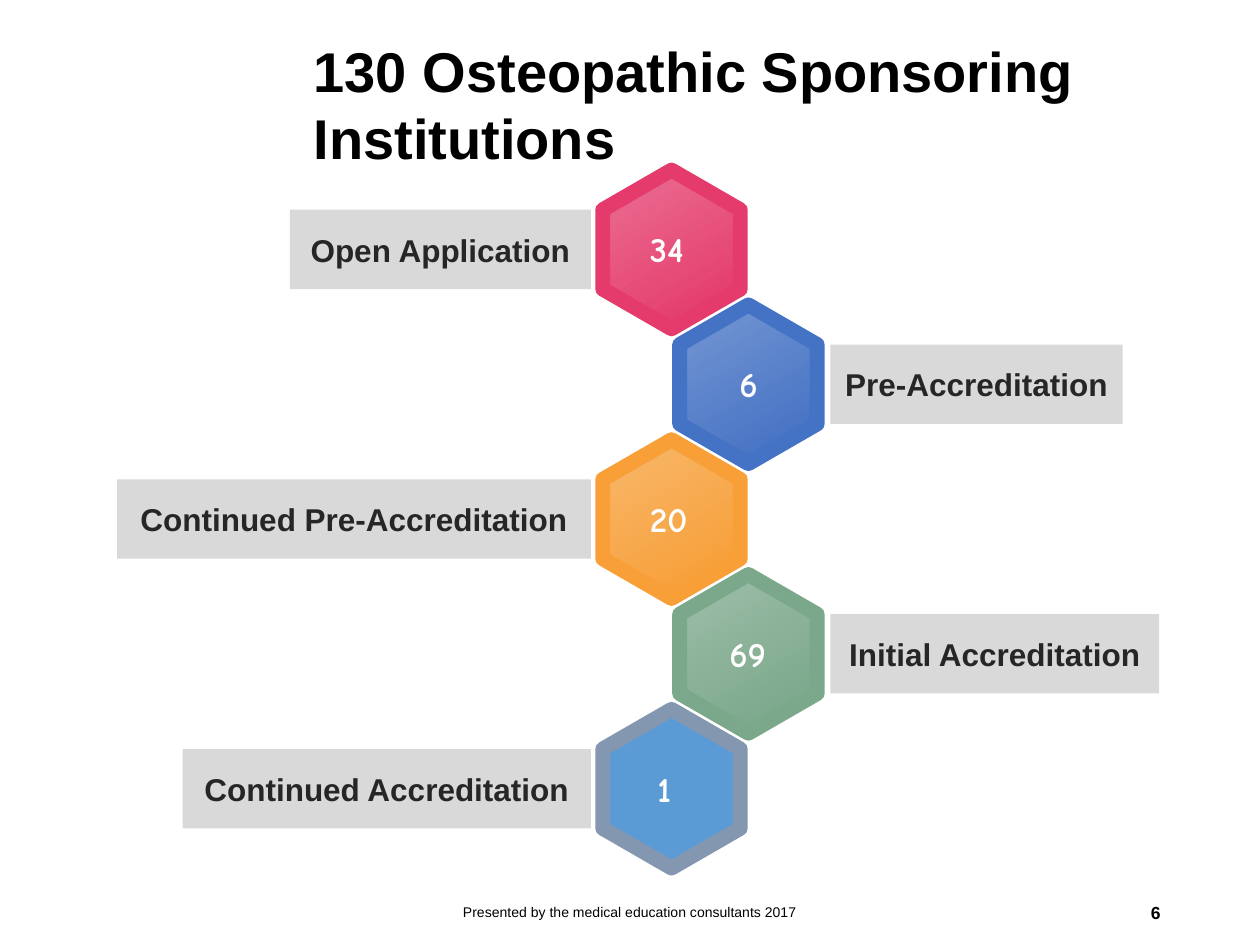
from math import cos, radians, sin

from lxml import etree
from pptx import Presentation
from pptx.dml.color import RGBColor
from pptx.enum.shapes import MSO_SHAPE
from pptx.enum.text import MSO_ANCHOR, MSO_AUTO_SIZE, PP_ALIGN
from pptx.oxml.ns import qn
from pptx.util import Inches, Pt

COLORS = {
    "pink": "E53B6C", "blue": "4472C4", "orange": "F89F37", "green": "7BA88B",
    "sky": "5B9BD5", "slate": "8497B0", "label": "D9D9D9", "dark": "262626",
    "white": "FFFFFF", "black": "000000",
}

TITLE = "130 Osteopathic Sponsoring Institutions"
FOOTER = "Presented by the medical education consultants 2017"
PAGE = "6"

# label, label width, count, left and width of the count box, edge colour, solid fill or None
STAGES = [
    ("Open Application", 2.39, "34", 5.06, 0.55, "pink", None),
    ("Pre-Accreditation", 2.32, "6", 5.77, 0.37, "blue", None),
    ("Continued Pre-Accreditation", 3.76, "20", 5.06, 0.55, "orange", None),
    ("Initial Accreditation", 2.61, "69", 5.69, 0.55, "green", None),
    ("Continued Accreditation", 3.24, "1", 5.12, 0.37, "slate", "sky"),
]

HEX_X = (5.33, 5.94)              # centres of the left and right columns
FIRST_Y, PITCH, RADIUS = 1.98, 1.07, 0.63
LABEL_H = 0.63
LABEL_RIGHT, LABEL_LEFT = 4.69, 6.59  # label edges facing the hexagons

prs = Presentation()
prs.slide_width, prs.slide_height = Inches(10), Inches(7.5)
slide = prs.slides.add_slide(prs.slide_layouts[6])
shapes = slide.shapes


def rgb(name):
    return RGBColor.from_string(COLORS[name])


def add_text(text, left, top, width, height, size=18, color="black", bold=False,
             font="Arial", align=PP_ALIGN.LEFT, anchor=MSO_ANCHOR.MIDDLE,
             fill=None, wrap=True, inset=(0.1, 0.05)):
    box = [Inches(v) for v in (left, top, width, height)]
    if fill:
        s = shapes.add_shape(MSO_SHAPE.RECTANGLE, *box)
        s.shadow.inherit = False
        s.fill.solid()
        s.fill.fore_color.rgb = rgb(fill)
        s.line.fill.background()
    else:
        s = shapes.add_textbox(*box)
    tf = s.text_frame
    tf.word_wrap = wrap
    tf.auto_size = MSO_AUTO_SIZE.NONE if wrap else MSO_AUTO_SIZE.SHAPE_TO_FIT_TEXT
    tf.vertical_anchor = anchor
    tf.margin_left = tf.margin_right = Inches(inset[0])
    tf.margin_top = tf.margin_bottom = Inches(inset[1])
    p = tf.paragraphs[0]
    p.alignment = align
    r = p.add_run()
    r.text = text
    r.font.name, r.font.size, r.font.bold = font, Pt(size), bold
    r.font.color.rgb = rgb(color)


def add_hexagon(cx, cy, edge, solid):
    points = [(Inches(cx + RADIUS * cos(radians(a))), Inches(cy + RADIUS * sin(radians(a))))
              for a in range(0, 360, 60)]
    builder = shapes.build_freeform(*points[0])
    builder.add_line_segments(points[1:], close=True)
    s = builder.convert_to_shape()
    s.shadow.inherit = False
    s.rotation = 30
    if solid:
        s.fill.solid()
        s.fill.fore_color.rgb = rgb(solid)
    else:
        s.fill.gradient()
        s.fill.gradient_angle = 150
        for stop, position in zip(s.fill.gradient_stops, (0.2, 0.8)):
            stop.position = position
            stop.color.rgb = rgb(edge)
        # The far stop is 75% opaque
        last = s._element.spPr.findall(".//" + qn("a:srgbClr"))[-1]
        etree.SubElement(last, qn("a:alpha"), val="75000")
    s.line.color.rgb = rgb(edge)
    s.line.width = Pt(8.5)
    etree.SubElement(s._element.spPr.find(qn("a:ln")), qn("a:round"))


# Zigzag of hexagons with counts and labels
for i, (label, width, count, count_x, count_w, edge, solid) in enumerate(STAGES):
    side = i % 2
    cy = FIRST_Y + i * PITCH
    add_hexagon(HEX_X[side], cy, edge, solid)
    add_text(count, count_x, cy - 0.22, count_w, 0.44, size=20, color="white",
             bold=True, font="Comic Neue", anchor=MSO_ANCHOR.TOP, wrap=False)
    left = LABEL_LEFT if side else LABEL_RIGHT - width
    add_text(label, left, cy - LABEL_H / 2, width, LABEL_H, color="dark", bold=True,
             align=PP_ALIGN.CENTER, fill="label")

# Title and footer
add_text(TITLE, 2.36, 0.43, 7.11, 0.78, size=32, bold=True, inset=(0.13, 0.07))
add_text(FOOTER, 3.31, 7.04, 3.38, 0.4, size=8, align=PP_ALIGN.CENTER)
add_text(PAGE, 7.06, 7.04, 2.25, 0.4, size=10, bold=True, align=PP_ALIGN.RIGHT)

prs.save("out.pptx")
